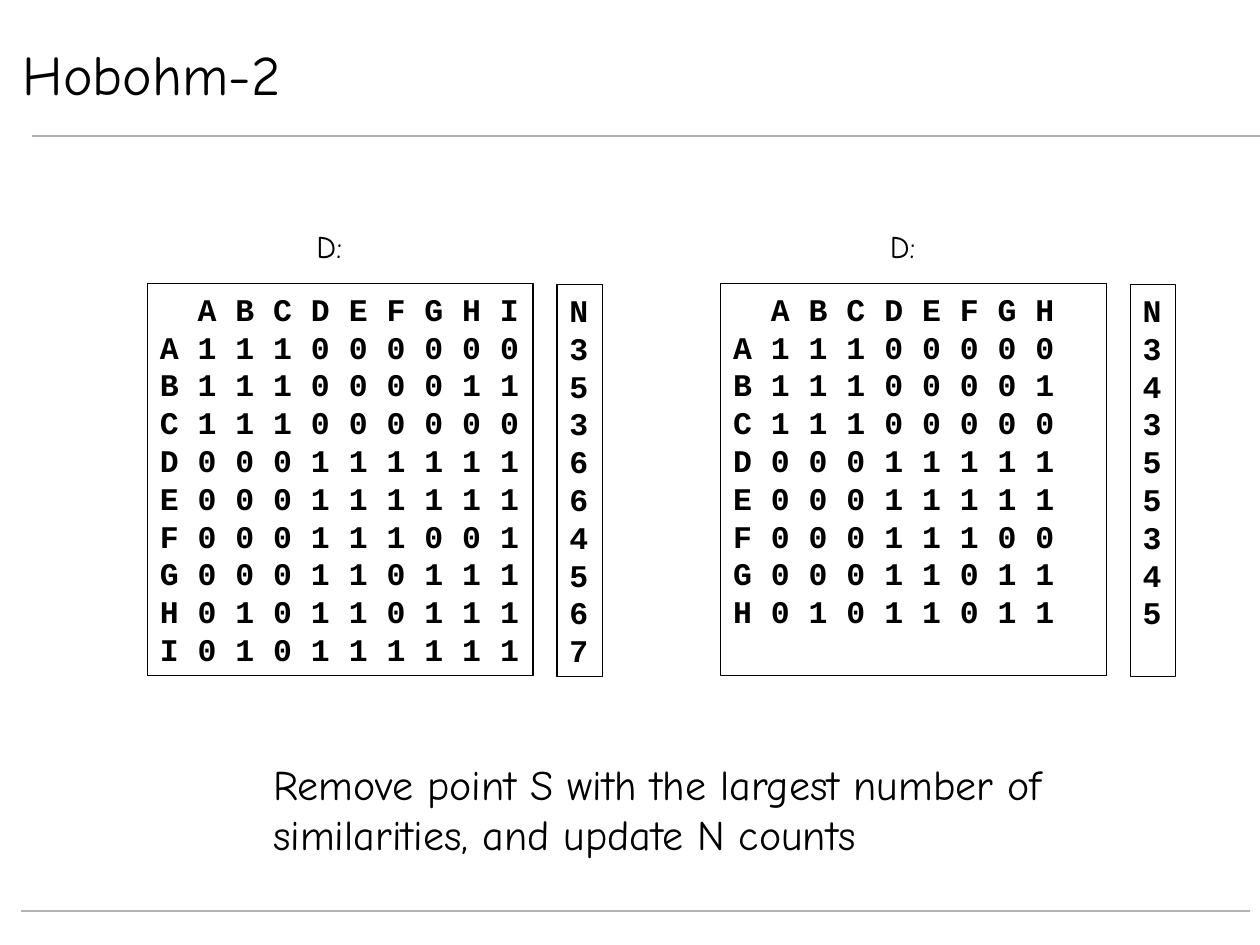
from lxml.etree import SubElement
from pptx import Presentation
from pptx.dml.color import RGBColor
from pptx.enum.shapes import MSO_CONNECTOR, MSO_SHAPE
from pptx.enum.text import MSO_ANCHOR, MSO_AUTO_SIZE, PP_ALIGN
from pptx.oxml.ns import qn
from pptx.util import Inches, Pt

COLS, ROWS = 100, 75  # grid over the 10 by 7.5 inch slide
LEFT, CENTER = PP_ALIGN.LEFT, PP_ALIGN.CENTER


def color(code):
    return RGBColor.from_string(code)


class Deck:
    ink, paper, rule = "000000", "FFFFFF", "B2B2B2"
    sans, mono = "Comic Neue", "Courier New"

    def __init__(self):
        self.prs = Presentation()
        self.prs.slide_width, self.prs.slide_height = Inches(10), Inches(7.5)
        self.slide = self.prs.slides.add_slide(self.prs.slide_layouts[5])

    def place(self, col, row, wide, high):
        dx, dy = self.prs.slide_width / COLS, self.prs.slide_height / ROWS
        return [round(n) for n in (col * dx, row * dy, wide * dx, high * dy)]

    def letter(self, frame, text, size, font, align=LEFT, bold=False):
        frame.text = text
        for para in frame.paragraphs:
            para.alignment = align
            for run in para.runs:
                run.font.name, run.font.size = font, Pt(size)
                run.font.bold = bold
                run.font.color.rgb = color(self.ink)

    def title(self, text, *spot):
        box = self.slide.shapes.title
        box.left, box.top, box.width, box.height = self.place(*spot)
        box.fill.solid()
        box.fill.fore_color.rgb = color(self.paper)
        box.line.color.rgb = color(self.paper)
        frame = box.text_frame
        frame.auto_size = MSO_AUTO_SIZE.NONE
        frame.vertical_anchor = MSO_ANCHOR.MIDDLE
        self.letter(frame, text, 32, self.sans)

    def line(self, col, row, wide):
        x, y, w, _ = self.place(col, row, wide, 0)
        line = self.slide.shapes.add_connector(
            MSO_CONNECTOR.STRAIGHT, x, y, x + w, y)
        line.line.color.rgb = color(self.rule)
        line.line.width = Pt(1.5)
        SubElement(line._element.spPr, qn("a:effectLst"))

    def text(self, text, size, *spot, align=LEFT, wrap=True):
        box = self.slide.shapes.add_textbox(*self.place(*spot))
        box.text_frame.word_wrap = wrap
        self.letter(box.text_frame, text, size, self.sans, align)

    def frame(self, lines, *spot, indent=0):
        """Outlined box of monospaced lines; the first may be indented."""
        box = self.slide.shapes.add_shape(
            MSO_SHAPE.RECTANGLE, *self.place(*spot))
        box.shadow.inherit = False
        box.fill.background()
        box.line.color.rgb = color(self.ink)
        box.line.width = Pt(0.75)
        frame = box.text_frame
        frame.word_wrap, frame.margin_right = True, 0
        frame.vertical_anchor = MSO_ANCHOR.TOP
        self.letter(frame, "\n".join(lines), 18, self.mono, bold=True)
        head = frame.paragraphs[0]._p.get_or_add_pPr()
        head.set("marL", str(Inches(indent)))
        head.set("indent", "0")

    def matrix(self, names, rows, col):
        """Similarity matrix D with its column of counts N."""
        body = [" ".join(name + row) for name, row in zip(names, rows)]
        counts = [str(row.count("1")) for row in rows]
        self.frame([" ".join(names)] + body, col, 22.5, 30.6, 31.1, indent=0.3)
        self.frame(["N"] + counts, col + 32.5, 22.6, 3.6, 31.1)
        self.text("D: ", 18, col + 12.2, 17.5, 5.3, 4, align=CENTER, wrap=False)


def main():
    deck = Deck()

    # Title and rules
    deck.line(2.5, 10.8, 97.5)
    deck.line(1.7, 72.3, 97.5)
    deck.title("Hobohm-2", 0.8, 3.3, 78.3, 5)

    # Matrix before and after removing the last point
    names = "ABCDEFGHI"
    rows = ["111000000", "111000011", "111000000", "000111111", "000111111",
            "000111001", "000110111", "010110111", "010111111"]
    deck.matrix(names, rows, 11.7)
    deck.matrix(names[:-1], [row[:-1] for row in rows[:-1]], 57.2)

    # Rule of the step
    deck.text("Remove point S with the largest number of similarities, "
              "and update N counts", 24, 20.7, 59.7, 68.5, 9)

    deck.prs.save("out.pptx")


if __name__ == "__main__":
    main()
